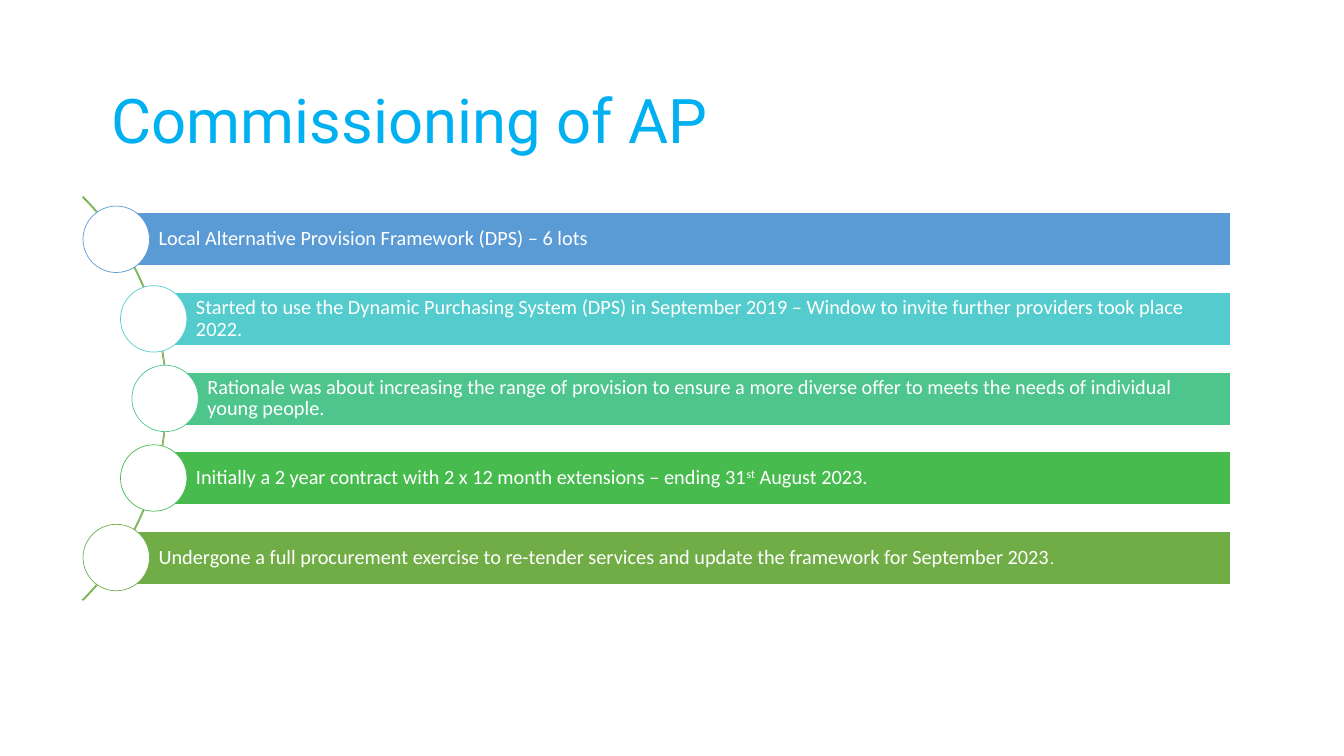
import math

import pptx
import pptx.dml.color
import pptx.enum.shapes
import pptx.enum.text
import pptx.util

Cm = pptx.util.Cm
Pt = pptx.util.Pt
SHAPES = pptx.enum.shapes.MSO_SHAPE
MIDDLE = pptx.enum.text.MSO_ANCHOR.MIDDLE
LEFT = pptx.enum.text.PP_ALIGN.LEFT

# Each step: colour, then runs of (text, size, superscript)
STEPS = [
    ("5B9BD5", [("Local Alternative Provision Framework (DPS) – 6 lots", 29, False)]),
    ("54CCCD", [("Started to use the Dynamic Purchasing System (DPS) in September 2019 – "
                 "Window to invite further providers took place 2022.", 29, False)]),
    ("4DC58D", [("Rationale was about increasing the range of provision to ensure a more "
                 "diverse offer to meets the needs of individual young people.", 29, False)]),
    ("48BB4F", [("Initially a 2 year contract with 2 x 12 month extensions – ending 31", 29, False),
                ("st", 29, True),
                (" August 2023.", 29, False)]),
    ("70AD47", [("Undergone a full procurement exercise to re-tender services and update "
                 "the framework for September 2023", 29, False),
                (".", 23, False)]),
]


def colour(value):
    return pptx.dml.color.RGBColor.from_string(value)


def add_figure(page, kind, box, fill, line):
    figure = page.shapes.add_shape(kind, *(Cm(length) for length in box))
    figure.shadow.inherit = False
    if fill:
        figure.fill.solid()
        figure.fill.fore_color.rgb = colour(fill)
    else:
        figure.fill.background()
    figure.line.color.rgb = colour(line)
    figure.line.width = Pt(1)
    return figure


def write_paragraph(frame, runs, font_name, font_colour):
    frame.word_wrap = True
    frame.vertical_anchor = MIDDLE
    para = frame.paragraphs[0]
    para.alignment = LEFT
    para.line_spacing = 0.9
    for text, size, superscript in runs:
        span = para.add_run()
        span.text = text
        span.font.name = font_name
        span.font.size = Pt(size)
        span.font.color.rgb = colour(font_colour)
        if superscript:
            span.font._element.set("baseline", "30000")


def add_title(page, box, text):
    title = page.shapes.add_textbox(*(Cm(length) for length in box))
    write_paragraph(title.text_frame, [(text, 88, False)], "Roboto", "00B0F0")


def add_bar(page, box, fill, runs):
    bar = add_figure(page, SHAPES.RECTANGLE, box, fill, "FFFFFF")
    frame = bar.text_frame
    frame.margin_left = Cm(2.13)
    frame.margin_top = frame.margin_right = frame.margin_bottom = Cm(0.2)
    write_paragraph(frame, runs, "Calibri", "FFFFFF")


def add_curved_list(page, box, steps):
    """Place bars at an even pitch, each starting at a node on a circle's right side."""
    left, top, width, height = box
    pitch, bar_height, node_size = 4.01, 2.67, 3.35
    arc_radius, node_radius = 14.39, 14.3
    centre_x, centre_y = left - 10.12, top + height / 2

    arc_box = (centre_x - arc_radius, centre_y - arc_radius, 2 * arc_radius, 2 * arc_radius)
    arc = add_figure(page, SHAPES.BLOCK_ARC, arc_box, None, "70AD47")
    # Start angle 315 degrees, end angle 45 degrees, nearly no thickness
    for index, value in enumerate((189, 27, 0.002)):
        arc.adjustments[index] = value

    for index, (step_colour, runs) in enumerate(steps):
        offset = (index - (len(steps) - 1) / 2) * pitch
        x = centre_x + math.sqrt(node_radius ** 2 - offset ** 2)
        y = centre_y + offset
        bar_box = (x, y - bar_height / 2, left + width - x, bar_height)
        add_bar(page, bar_box, step_colour, runs)
        node_box = (x - node_size / 2, y - node_size / 2, node_size, node_size)
        add_figure(page, SHAPES.OVAL, node_box, "FFFFFF", step_colour)


def main():
    deck = pptx.Presentation()
    deck.slide_width, deck.slide_height = Cm(67.72), Cm(38.1)
    page = deck.slides.add_slide(deck.slide_layouts[6])
    add_title(page, (5.38, 2.54, 50.27, 9.9 - 2.54), "Commissioning of AP")
    add_curved_list(page, (4.14, 9.9, 57.87, 20.36), STEPS)
    deck.save("out.pptx")


if __name__ == "__main__":
    main()
